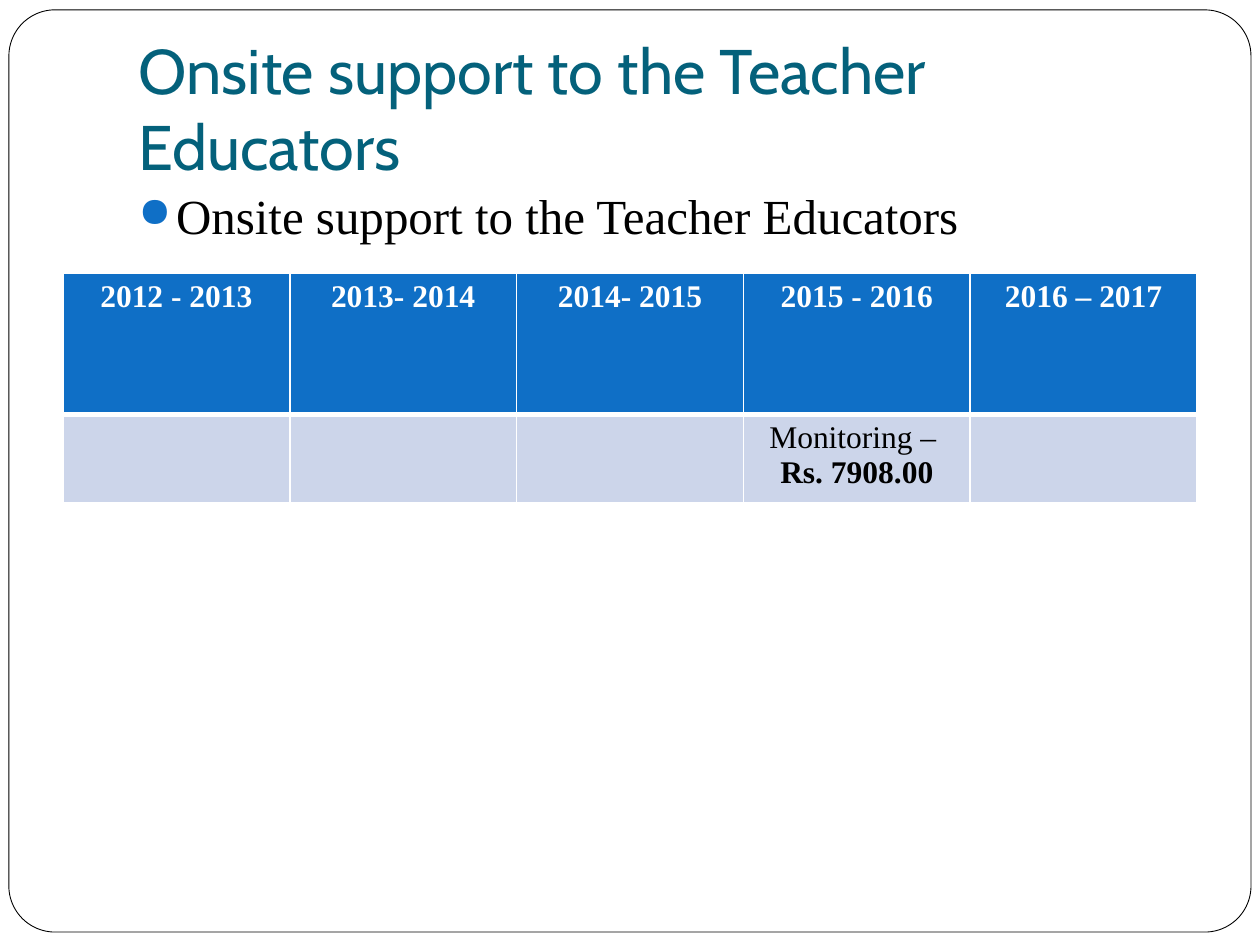
from lxml.etree import SubElement
from pptx import Presentation
from pptx.dml.color import RGBColor
from pptx.enum.shapes import MSO_SHAPE
from pptx.enum.text import MSO_ANCHOR, MSO_AUTO_SIZE, PP_ALIGN
from pptx.oxml.ns import qn
from pptx.util import Cm, Pt

TEAL = RGBColor(0x04, 0x61, 0x7B)
BLUE = RGBColor(0x0F, 0x6F, 0xC6)
PALE_BLUE = RGBColor(0xCC, 0xD5, 0xEA)
BLACK = RGBColor(0, 0, 0)
WHITE = RGBColor(0xFF, 0xFF, 0xFF)

HEADING = "Onsite support to the Teacher Educators"
YEARS = ["2012 - 2013", "2013- 2014", "2014- 2015", "2015 - 2016", "2016 – 2017"]
MONITORING = [("Monitoring – ", False), ("Rs. 7908.00", True)]
MONITORING_COLUMN = 3


def set_format(target, values):
    for name, value in values.items():
        setattr(target, name, value)


def add_text(paragraph, text, color, **font_values):
    run = paragraph.add_run()
    run.text = text
    set_format(run.font, font_values)
    run.font.color.rgb = color


def add_frame(slide):
    """Draw the rounded page border behind the title."""
    frame = slide.shapes.add_shape(
        MSO_SHAPE.ROUNDED_RECTANGLE, Cm(0.18), Cm(0.2), Cm(25.04), Cm(18.59))
    frame.adjustments[0] = 0.05
    frame.shadow.inherit = False
    frame.fill.solid()
    frame.fill.fore_color.rgb = WHITE
    frame.line.color.rgb = BLACK
    frame.line.width = Pt(0.5)
    slide.shapes.title.element.addprevious(frame.element)


def format_title(title):
    set_format(title, dict(left=Cm(2.54), top=Cm(0.76), width=Cm(21.59), height=Cm(3.18)))
    set_format(title.text_frame, dict(
        vertical_anchor=MSO_ANCHOR.BOTTOM, word_wrap=True, auto_size=MSO_AUTO_SIZE.NONE,
        margin_left=Cm(0.25), margin_right=Cm(0.25),
        margin_top=Cm(0.13), margin_bottom=Cm(0.25)))
    paragraph = title.text_frame.paragraphs[0]
    paragraph.alignment = PP_ALIGN.LEFT
    add_text(paragraph, HEADING, TEAL, name="Cabin", size=Pt(36))


def add_bullet(paragraph, char, color, percent, indent):
    properties = paragraph._p.get_or_add_pPr()
    properties.set("marL", str(indent))
    properties.set("indent", str(-indent))
    bullet_color = SubElement(properties, qn("a:buClr"))
    SubElement(bullet_color, qn("a:srgbClr"), val=str(color))
    SubElement(properties, qn("a:buSzPct"), val=str(percent * 1000))
    SubElement(properties, qn("a:buChar"), char=char)


def add_topic(slide):
    topic = slide.shapes.add_textbox(Cm(2.54), Cm(3.61), Cm(21.59), Cm(1.47))
    topic.text_frame.word_wrap = True
    paragraph = topic.text_frame.paragraphs[0]
    paragraph.space_before = Pt(5.8)
    add_bullet(paragraph, "●", BLUE, 85, Cm(0.76))
    add_text(paragraph, HEADING, BLACK, name="Times New Roman", size=Pt(28))


def set_borders(cell, bottom_width):
    properties = cell._tc.get_or_add_tcPr()
    widths = dict(lnL=1, lnR=1, lnT=1, lnB=bottom_width)
    for side, width in widths.items():
        line = SubElement(properties, qn(f"a:{side}"), w=str(Pt(width)))
        fill = SubElement(line, qn("a:solidFill"))
        SubElement(fill, qn("a:srgbClr"), val=str(WHITE))


def format_cell(cell, lines, fill, color, bottom_width):
    """Fill a cell with (text, bold) lines."""
    set_borders(cell, bottom_width)
    cell.fill.solid()
    cell.fill.fore_color.rgb = fill
    for number, (text, bold) in enumerate(lines):
        frame = cell.text_frame
        paragraph = frame.add_paragraph() if number else frame.paragraphs[0]
        paragraph.alignment = PP_ALIGN.CENTER
        add_text(paragraph, text, color, name="Times New Roman", size=Pt(18), bold=bold)


def add_year_table(slide):
    row_heights = [Cm(2.84), Cm(1.63)]
    table = slide.shapes.add_table(
        2, len(YEARS), Cm(1.27), Cm(5.51), Cm(22.86), sum(row_heights)).table
    for row, height in zip(table.rows, row_heights):
        row.height = height
    for column, year in enumerate(YEARS):
        support = MONITORING if column == MONITORING_COLUMN else []
        format_cell(table.cell(0, column), [(year, True)], BLUE, WHITE, 3)
        format_cell(table.cell(1, column), support, PALE_BLUE, BLACK, 1)
        # The shared edge below the header keeps the header's heavier line.
        table.cell(1, column)._tc.tcPr.find(qn("a:lnT")).set("w", str(Pt(3)))


def main():
    presentation = Presentation()
    presentation.slide_width = Cm(25.4)
    presentation.slide_height = Cm(19.05)
    slide = presentation.slides.add_slide(presentation.slide_layouts[5])
    add_frame(slide)
    format_title(slide.shapes.title)
    add_topic(slide)
    add_year_table(slide)
    presentation.save("out.pptx")


if __name__ == "__main__":
    main()
